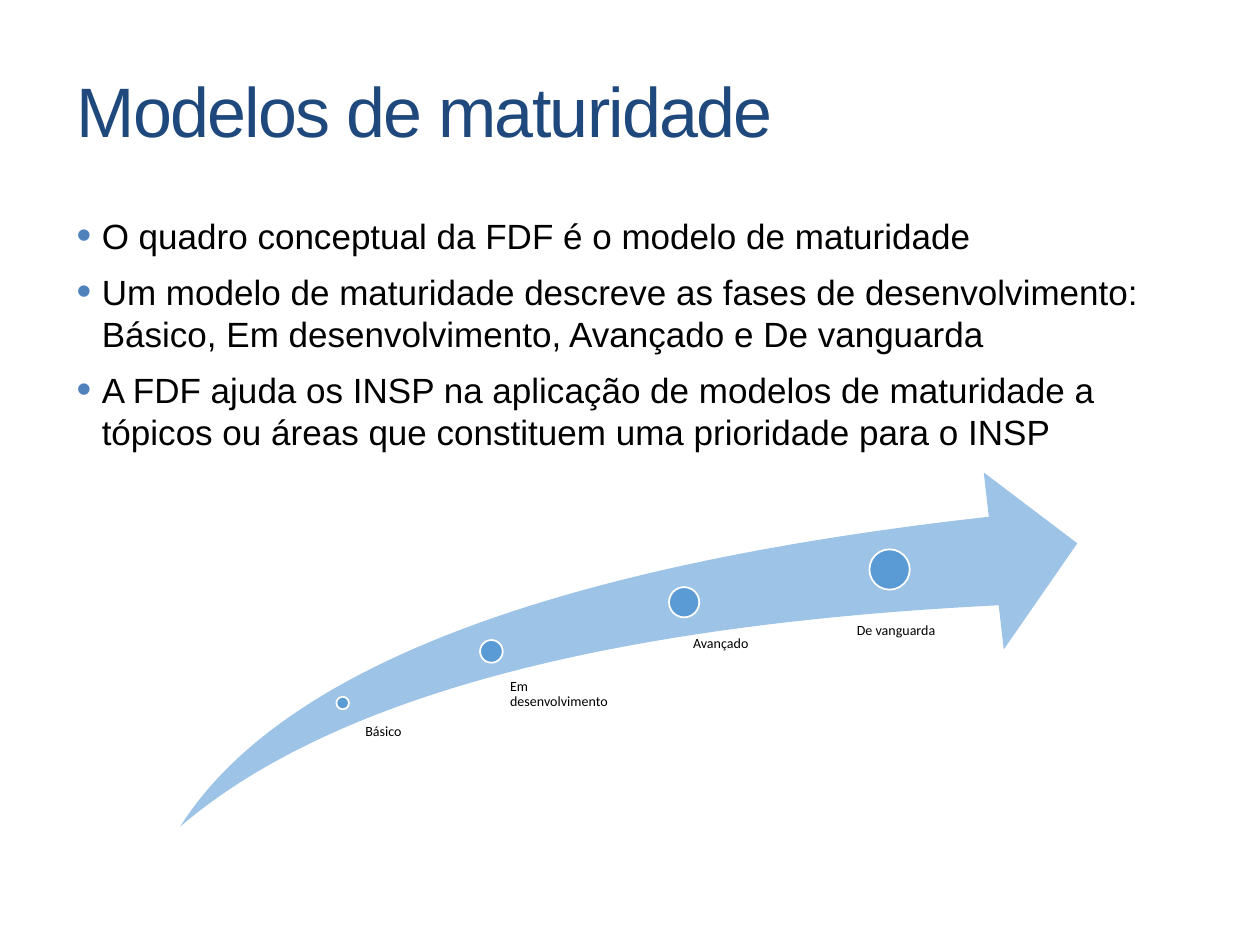
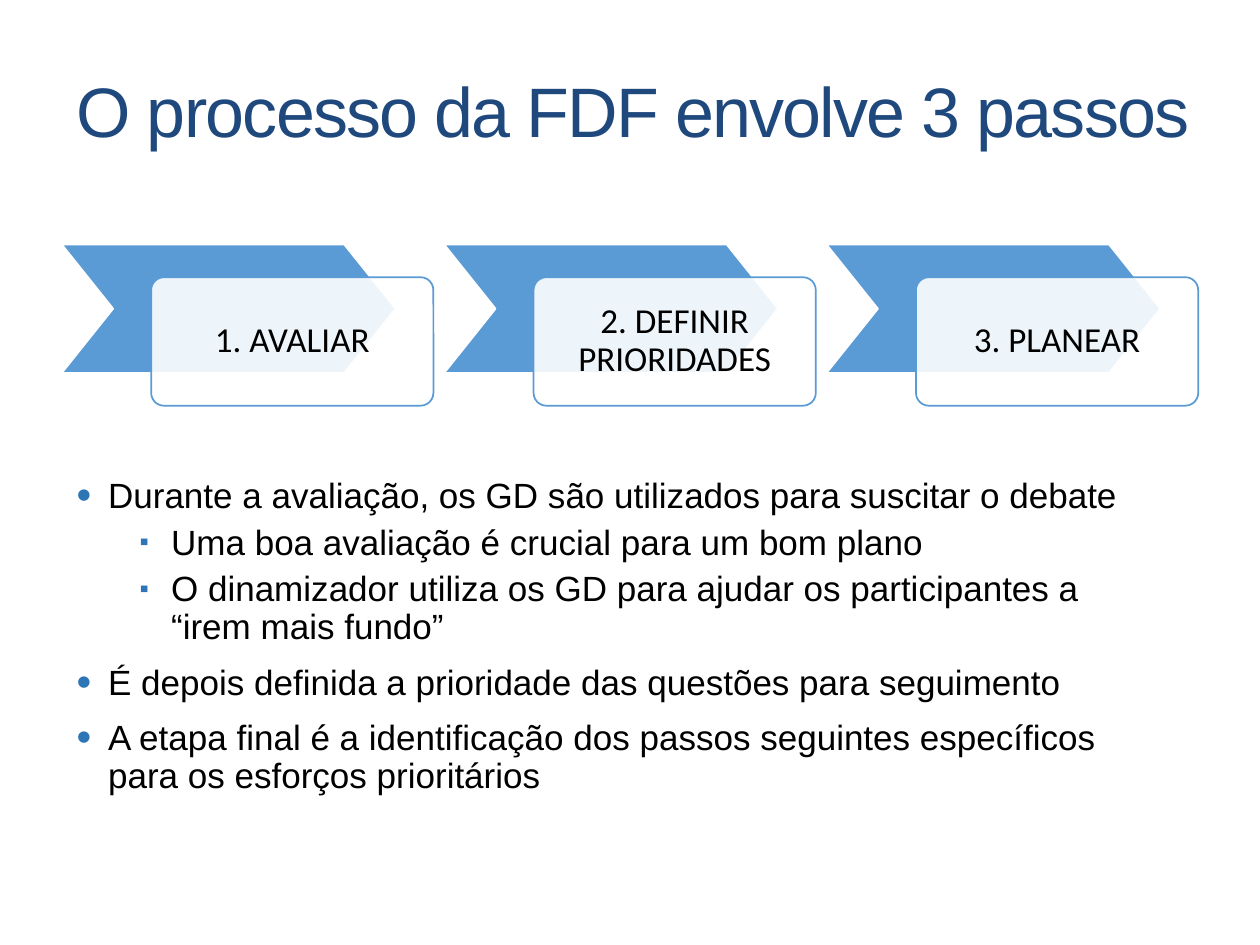
from dataclasses import dataclass

from lxml.etree import SubElement
from pptx import Presentation
from pptx.dml.color import RGBColor
from pptx.enum.shapes import MSO_SHAPE as Preset
from pptx.enum.text import MSO_ANCHOR as Anchor, PP_ALIGN as Align
from pptx.oxml.ns import qn
from pptx.util import Inches, Pt


@dataclass(frozen=True)
class Theme:
    title: str = "1F497D"
    text: str = "000000"
    white: str = "FFFFFF"
    accent: str = "5B9BD5"
    swoosh: str = "9DC3E6"
    heading_font: str = "Arial"
    diagram_font: str = "Calibri"
    title_size: int = 40
    body_size: int = 20
    label_size: int = 8


@dataclass(frozen=True)
class BulletStyle:
    """One outline level; lengths in inches, spacing in points."""
    char: str
    color: str
    percent: int
    margin: float
    hanging: float
    before: int
    after: int = 0
    line_spacing: float = 1.0


THEME = Theme()

MODEL_TITLE = "Modelos de maturidade"
MODEL_LEVELS = [BulletStyle("•", "4F81BD", 120, 0.2, 0.2, before=6, after=2)]
MODEL_POINTS = [
    (0, "O quadro conceptual da FDF é o modelo de maturidade"),
    (0, "Um modelo de maturidade descreve as fases de desenvolvimento: "
        "Básico, Em desenvolvimento, Avançado e De vanguarda"),
    (0, "A FDF ajuda os INSP na aplicação de modelos de maturidade a "
        "tópicos ou áreas que constituem uma prioridade para o INSP"),
]
SWOOSH = (1.43, 3.75, 7.12, 2.81)
# stage name, dot (left, top, diameter), label (left, top, width, height), label inset
STAGES = [
    ("Básico", (2.67, 5.53, 0.1), (2.85, 5.75, 0.77, 0.67), 0.05),
    ("Em desenvolvimento", (3.81, 5.08, 0.18), (3.95, 5.39, 0.94, 0.37), 0.1),
    ("Avançado", (5.31, 4.66, 0.24), (5.37, 5.05, 0.88, 0.39), 0.13),
    ("De vanguarda", (6.9, 4.36, 0.32), (6.63, 4.95, 1.34, 0.25), 0.17),
]

PROCESS_TITLE = "O processo da FDF envolve 3 passos"
PROCESS_LEVELS = [
    BulletStyle("•", "2E75B6", 120, 0.25, 0.25, before=10, line_spacing=0.9),
    BulletStyle("▪", "2E75B6", 75, 0.75, 0.25, before=5, line_spacing=0.9),
]
PROCESS_POINTS = [
    (0, "Durante a avaliação, os GD são utilizados para suscitar o debate"),
    (1, "Uma boa avaliação é crucial para um bom plano"),
    (1, "O dinamizador utiliza os GD para ajudar os participantes a “irem mais fundo”"),
    (0, "É depois definida a prioridade das questões para seguimento"),
    (0, "A etapa final é a identificação dos passos seguintes específicos "
        "para os esforços prioritários"),
]
STEPS = ["1. AVALIAR", "2. DEFINIR PRIORIDADES", "3. PLANEAR"]
STEP_LEFT, STEP_TOP, STEP_PITCH, STEP_HEIGHT = 0.49, 1.94, 3.035, 1.02
CHEVRON_WIDTH, CARD_WIDTH = 2.65, 2.24
CARD_SHIFT = (0.71, 0.26)
CARD_EDGE = 0.03


def rgb(color):
    return RGBColor.from_string(color)


def style_font(font, name, size, color):
    font.name = name
    font.size = Pt(size)
    font.color.rgb = rgb(color)


def add_text_box(page, at, insets=(0.1, 0.05, 0.1, 0.05), anchor=Anchor.TOP):
    frame = page.shapes.add_textbox(*map(Inches, at)).text_frame
    frame.word_wrap = True
    frame.vertical_anchor = anchor
    (frame.margin_left, frame.margin_top,
     frame.margin_right, frame.margin_bottom) = map(Inches, insets)
    return frame


def add_preset(page, preset, at, fill, line=None, adjustments=(), opacity=None):
    shape = page.shapes.add_shape(preset, *map(Inches, at))
    shape.shadow.inherit = False
    for index, value in enumerate(adjustments):
        shape.adjustments[index] = value
    shape.fill.solid()
    shape.fill.fore_color.rgb = rgb(fill)
    if opacity is not None:
        color = shape.fill._xPr.find(qn("a:solidFill")).find(qn("a:srgbClr"))
        SubElement(color, qn("a:alpha"), val=str(opacity * 1000))
    if line:
        shape.line.color.rgb = rgb(line)
        shape.line.width = Pt(1)
    else:
        shape.line.fill.background()


def add_title(page, text):
    frame = add_text_box(page, (0.51, 0.33, 9.18, 1.08), anchor=Anchor.MIDDLE)
    frame.text = text
    span = frame.paragraphs[0].runs[0]
    style_font(span.font, THEME.heading_font, THEME.title_size, THEME.title)
    span.font._element.set("spc", "-100")


def set_bullet(para, style):
    properties = para._p.get_or_add_pPr()
    properties.set("marL", str(Inches(style.margin)))
    properties.set("indent", str(-Inches(style.hanging)))
    color = SubElement(properties, qn("a:buClr"))
    SubElement(color, qn("a:srgbClr"), val=style.color)
    SubElement(properties, qn("a:buSzPct"), val=str(style.percent * 1000))
    SubElement(properties, qn("a:buFont"), typeface=THEME.heading_font)
    SubElement(properties, qn("a:buChar"), char=style.char)


def add_bullets(page, at, points, levels):
    frame = add_text_box(page, at)
    for index, (level, text) in enumerate(points):
        style = levels[level]
        para = frame.add_paragraph() if index else frame.paragraphs[0]
        para.text = text
        para.level = level
        set_bullet(para, style)
        para.line_spacing = style.line_spacing
        para.space_before = Pt(style.before if index else 0)
        para.space_after = Pt(style.after)
        style_font(para.runs[0].font, THEME.heading_font, THEME.body_size, THEME.text)


def add_diagram_label(page, text, at, insets, size, anchor=Anchor.TOP, align=Align.LEFT):
    frame = add_text_box(page, at, insets, anchor)
    frame.text = text
    para = frame.paragraphs[0]
    para.alignment = align
    para.line_spacing = 0.9
    style_font(para.runs[0].font, THEME.diagram_font, size, THEME.text)


def add_stage(page, name, dot, label_at, inset):
    left, top, diameter = dot
    add_preset(page, Preset.OVAL, (left, top, diameter, diameter),
               THEME.accent, THEME.white)
    add_diagram_label(page, name, label_at, (inset, 0, 0, 0), THEME.label_size)


def add_step(page, index, text):
    left = STEP_LEFT + index * STEP_PITCH
    card_left, card_top = left + CARD_SHIFT[0], STEP_TOP + CARD_SHIFT[1]
    add_preset(page, Preset.CHEVRON, (left, STEP_TOP, CHEVRON_WIDTH, STEP_HEIGHT),
               THEME.accent, THEME.white, [0.4])
    add_preset(page, Preset.ROUNDED_RECTANGLE,
               (card_left, card_top, CARD_WIDTH, STEP_HEIGHT),
               THEME.white, THEME.accent, [0.1], opacity=90)
    label_at = (card_left + CARD_EDGE, card_top + CARD_EDGE,
                CARD_WIDTH - 2 * CARD_EDGE, STEP_HEIGHT - 2 * CARD_EDGE)
    add_diagram_label(page, text, label_at, (0.16,) * 4, THEME.body_size,
                      Anchor.MIDDLE, Align.CENTER)


def add_page(deck):
    page = deck.slides.add_slide(deck.slide_layouts[6])
    page.background.fill.solid()
    page.background.fill.fore_color.rgb = rgb(THEME.white)
    return page


def build_model_page(deck):
    page = add_page(deck)
    add_preset(page, Preset.SWOOSH_ARROW, SWOOSH, THEME.swoosh, adjustments=[0.25, 0.25])
    for stage in STAGES:
        add_stage(page, *stage)
    add_bullets(page, (0.51, 1.65, 8.74, 2.6), MODEL_POINTS, MODEL_LEVELS)
    add_title(page, MODEL_TITLE)


def build_process_page(deck):
    page = add_page(deck)
    add_bullets(page, (0.51, 3.75, 8.83, 2.7), PROCESS_POINTS, PROCESS_LEVELS)
    for index, text in enumerate(STEPS):
        add_step(page, index, text)
    add_title(page, PROCESS_TITLE)


def main():
    deck = Presentation()
    deck.slide_width, deck.slide_height = Inches(10), Inches(7.5)
    build_model_page(deck)
    build_process_page(deck)
    deck.save("out.pptx")


if __name__ == "__main__":
    main()
